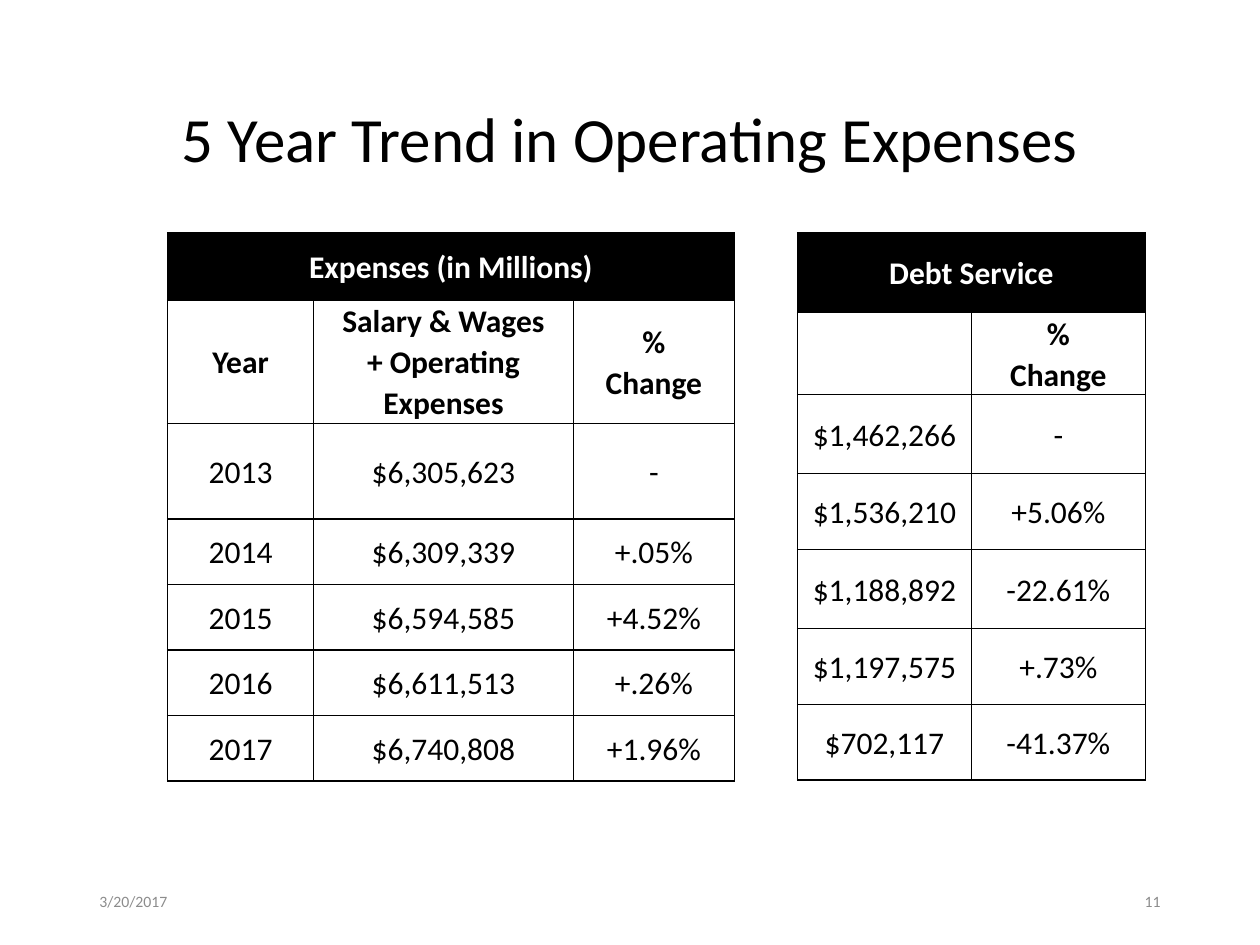
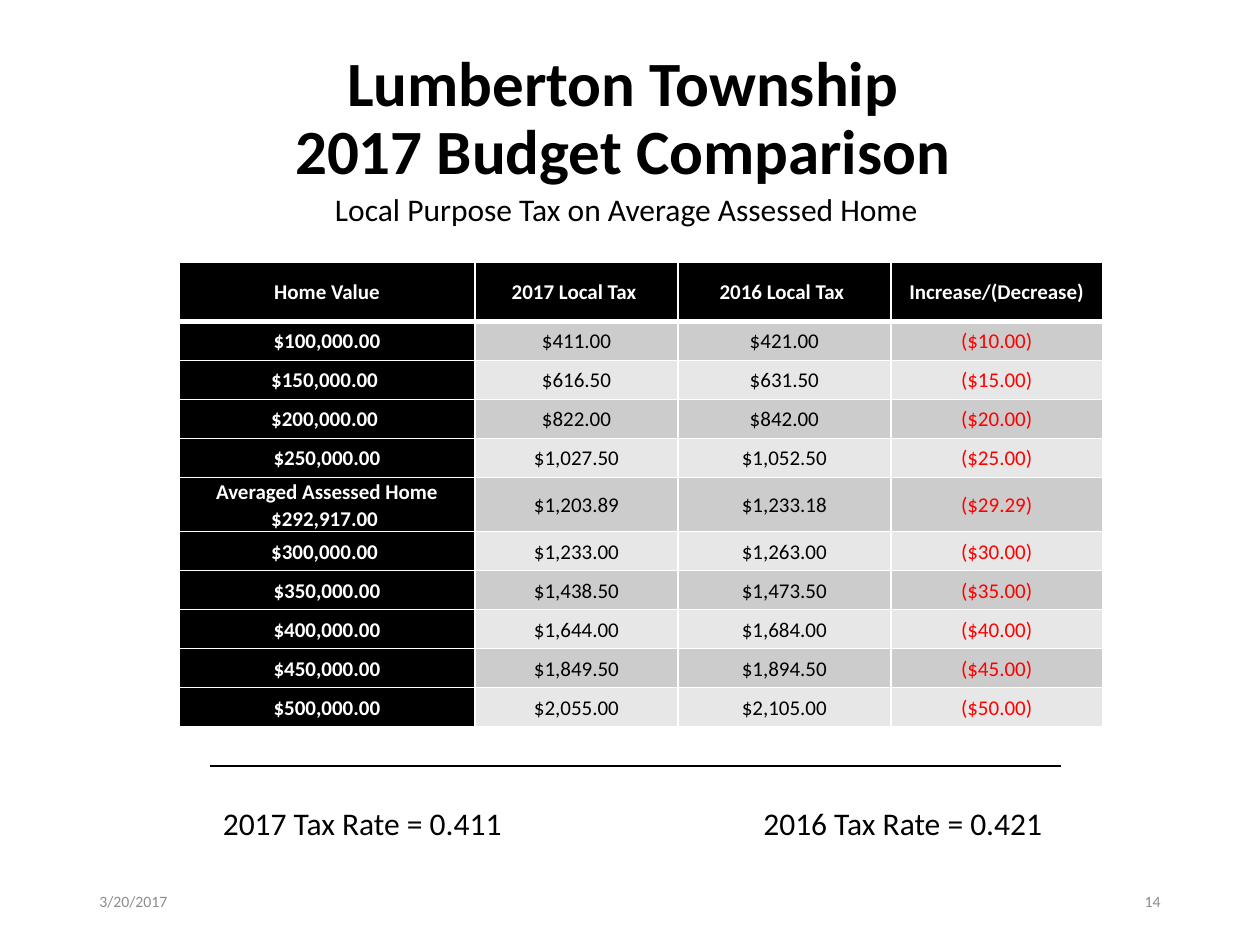
from lxml.etree import SubElement
from pptx import Presentation
from pptx.dml.color import RGBColor
from pptx.enum.shapes import MSO_CONNECTOR
from pptx.enum.text import MSO_ANCHOR, MSO_AUTO_SIZE, PP_ALIGN
from pptx.oxml.ns import qn
from pptx.util import Inches, Pt

FONT = "Calibri"
BLACK, WHITE, GREY, RED = "000000", "FFFFFF", "8C8C8C", "FF0000"
BANDS = ("CCCCCC", "E7E7E7")
WIDE, HIGH = 10, 7.5
EDGE = 0.69
SPAN = WIDE - 2 * EDGE
DATE = "3/20/2017"

COSTS = [
    ("Expenses (in Millions)", "", ""),
    ("Year", "Salary & Wages\n+ Operating\nExpenses", "%\nChange"),
    ("2013", "$6,305,623", "-"),
    ("2014", "$6,309,339", "+.05%"),
    ("2015", "$6,594,585", "+4.52%"),
    ("2016", "$6,611,513", "+.26%"),
    ("2017", "$6,740,808", "+1.96%"),
]
DEBT = [
    ("Debt Service", ""),
    ("", "%\nChange"),
    ("$1,462,266", "-"),
    ("$1,536,210", "+5.06%"),
    ("$1,188,892", "-22.61%"),
    ("$1,197,575", "+.73%"),
    ("$702,117", "-41.37%"),
]
TAXES = [
    ("Home Value", "2017 Local Tax ", "2016 Local Tax ", "Increase/(Decrease)"),
    ("$100,000.00", "$411.00", "$421.00", "($10.00)"),
    ("$150,000.00 ", "$616.50", "$631.50", "($15.00)"),
    ("$200,000.00 ", "$822.00", "$842.00", "($20.00)"),
    ("$250,000.00", "$1,027.50", "$1,052.50", "($25.00)"),
    ("Averaged Assessed Home\n$292,917.00 ", "$1,203.89", "$1,233.18", "($29.29)"),
    ("$300,000.00 ", "$1,233.00", "$1,263.00", "($30.00)"),
    ("$350,000.00", "$1,438.50", "$1,473.50", "($35.00)"),
    ("$400,000.00", "$1,644.00", "$1,684.00", "($40.00)"),
    ("$450,000.00", "$1,849.50", "$1,894.50", "($45.00)"),
    ("$500,000.00", "$2,055.00", "$2,105.00", "($50.00)"),
]


def tint(code):
    return RGBColor.from_string(code)


def style(frame, size, color=BLACK, bold=False, align=PP_ALIGN.CENTER, lead=None):
    for para in frame.paragraphs:
        para.alignment = align
        para.line_spacing = lead
        font = para.font
        font.name, font.size, font.bold = FONT, Pt(size), bold
        font.color.rgb = tint(color)


def label(slide, text, box, size, wrap=True, anchor=MSO_ANCHOR.TOP, **look):
    frame = slide.shapes.add_textbox(*map(Inches, box)).text_frame
    frame.word_wrap = wrap
    frame.vertical_anchor = anchor
    frame.text = text
    style(frame, size, **look)
    return frame


def start(deck, title, top, page, bold=False):
    slide = deck.slides.add_slide(deck.slide_layouts[5])
    head = slide.shapes.title
    head.left, head.top, head.width, head.height = map(Inches, (EDGE, top, SPAN, 1.45))
    frame = head.text_frame
    frame.text = title
    frame.auto_size = MSO_AUTO_SIZE.NONE
    frame.vertical_anchor = MSO_ANCHOR.MIDDLE
    style(frame, 36, bold=bold, lead=0.9)
    foot = 2.25
    for text, left, align in (
        (DATE, EDGE, PP_ALIGN.LEFT),
        (page, WIDE - EDGE - foot, PP_ALIGN.RIGHT),
    ):
        label(slide, text, (left, 6.95, foot, 0.4), 9,
              anchor=MSO_ANCHOR.MIDDLE, color=GREY, align=align)
    return slide


def border(cell, color, top=1, bottom=1):
    props = cell._tc.get_or_add_tcPr()
    sides = (("L", 1), ("R", 1), ("T", top), ("B", bottom))
    for spot, (side, width) in enumerate(sides):
        line = SubElement(props, qn(f"a:ln{side}"), w=str(Pt(width)))
        fill = SubElement(line, qn("a:solidFill"))
        SubElement(fill, qn("a:srgbClr"), val=color)
        props.insert(spot, line)


def ledger(row, col):
    return (BLACK, WHITE, True) if row == 0 else (WHITE, BLACK, row == 1)


def banded(row, col):
    if row == 0 or col == 0:
        return BLACK, WHITE, True
    return BANDS[(row - 1) % 2], RED if col == 3 else BLACK, False


def grid(slide, data, spot, cols, rows, look, size, edge, rule=1):
    frame = slide.shapes.add_table(
        len(rows), len(cols), *map(Inches, (*spot, sum(cols), sum(rows))))
    table = frame.table
    table.first_row = table.horz_banding = False
    for col, width in zip(table.columns, cols):
        col.width = Inches(width)
    for row, height in zip(table.rows, rows):
        row.height = Inches(height)
    for r, line in enumerate(data):
        for c, text in enumerate(line):
            cell = table.cell(r, c)
            fill, color, bold = look(r, c)
            cell.text = text
            cell.vertical_anchor = MSO_ANCHOR.MIDDLE
            cell.margin_left = cell.margin_right = Inches(0.07)
            cell.margin_top = cell.margin_bottom = 0
            cell.fill.solid()
            cell.fill.fore_color.rgb = tint(fill)
            style(cell.text_frame, size, color, bold, lead=1.07)
            border(cell, edge, rule if r == 1 else 1, rule if r == 0 else 1)
    return table


def trend(deck):
    slide = start(deck, "5 Year Trend in Operating Expenses", 0.4, "11")
    top = 1.85
    for data, left, cols, rows in (
        (COSTS, 1.33, (1.16, 2.06, 1.28), (0.53, 0.98, 0.76) + (0.52,) * 4),
        (DEBT, 6.33, (1.38, 1.38), (0.63, 0.65, 0.63, 0.6, 0.63, 0.6, 0.6)),
    ):
        table = grid(slide, data, (left, top), cols, rows, ledger, 18, BLACK)
        table.cell(0, 0).merge(table.cell(0, len(cols) - 1))


def compare(deck):
    slide = start(deck, "Lumberton Township \v2017 Budget Comparison ", 0.23, "14", True)
    label(slide, "Local Purpose Tax on Average Assessed Home ",
          (2.47, 1.46, 5.06, 0.4), 18, wrap=False)
    rows = [0.47] + [0.31] * 10
    rows[5] = 0.43
    grid(slide, TAXES, (1.42, 2.08), (2.35, 1.61, 1.69, 1.68), rows,
         banded, 12, WHITE, 3)

    left, width, level = 1.67, 6.75, 6.08
    line = slide.shapes.add_connector(
        MSO_CONNECTOR.STRAIGHT, *map(Inches, (left, level, left + width, level)))
    line.line.color.rgb = tint(BLACK)
    line.line.width = Pt(1)
    SubElement(line._element.spPr, qn("a:effectLst"))

    rates = label(slide, "2017 Tax Rate = 0.411\t2016 Tax Rate = 0.421",
                  (left, level + 0.25, width, 0.4), 18, align=PP_ALIGN.LEFT)
    props = rates.paragraphs[0]._p.get_or_add_pPr()
    tabs = SubElement(props, qn("a:tabLst"))
    SubElement(tabs, qn("a:tab"), pos=str(Inches(4.29)), algn="l")
    props.find(qn("a:defRPr")).addprevious(tabs)


def main():
    deck = Presentation()
    deck.slide_width, deck.slide_height = Inches(WIDE), Inches(HIGH)
    trend(deck)
    compare(deck)
    deck.save("out.pptx")


if __name__ == "__main__":
    main()
